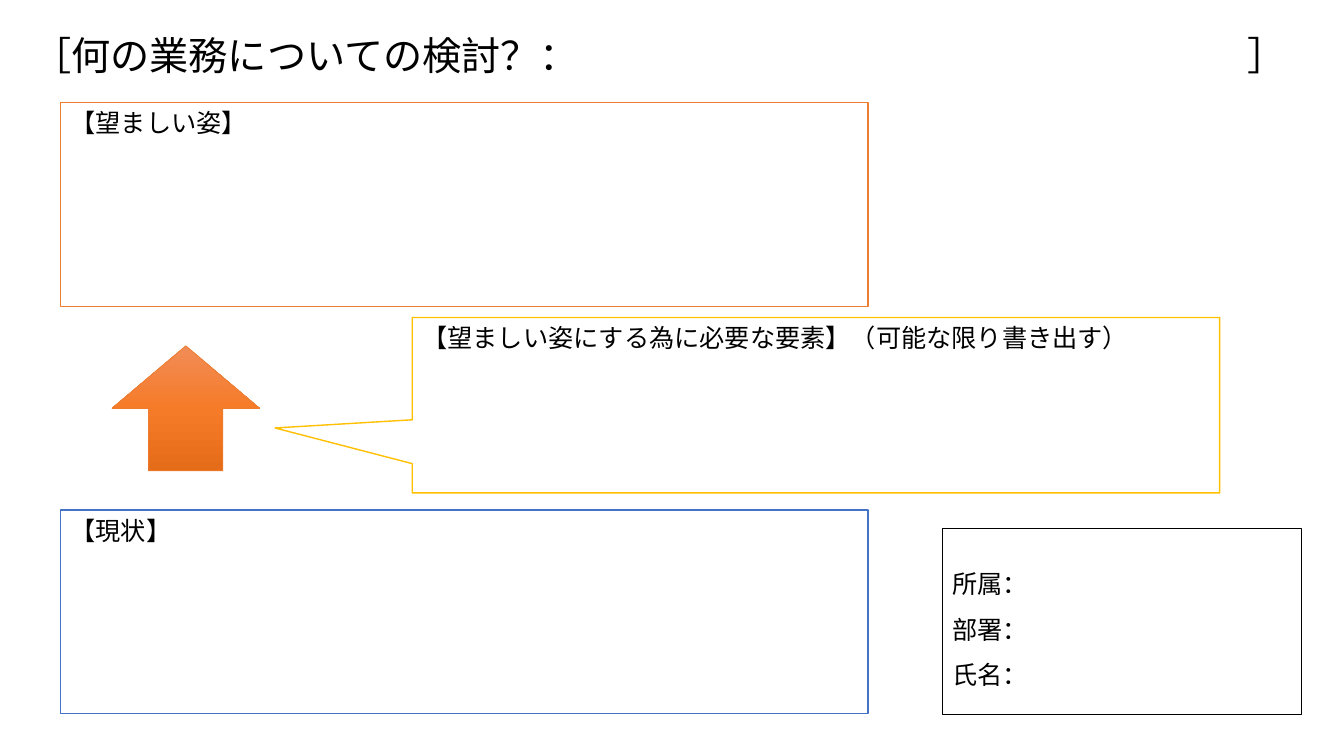
from copy import deepcopy

from pptx import Presentation
from pptx.dml.color import RGBColor
from pptx.enum.shapes import MSO_SHAPE as SHAPE
from pptx.enum.text import MSO_ANCHOR as ANCHOR, PP_ALIGN as ALIGN
from pptx.oxml.ns import qn
from pptx.util import Pt
from lxml.etree import SubElement

FONT = "Noto Sans CJK JP"


def rgb(value):
    """Turn a hex string into a colour."""
    return RGBColor.from_string(value)


def write(tf, text, size=18, color="000000", anchor=ANCHOR.TOP, spacing=1.0):
    """Write one left-aligned paragraph per line of text."""
    tf.word_wrap = True
    tf.vertical_anchor = anchor
    for i, line in enumerate(text.split("\n")):
        p = tf.add_paragraph() if i else tf.paragraphs[0]
        p.alignment = ALIGN.LEFT
        p.line_spacing = spacing
        r = p.add_run()
        r.text = line
        r.font.size = Pt(size)
        r.font.name = FONT
        r.font.color.rgb = rgb(color)
        SubElement(r.font._element, qn("a:ea")).set("typeface", FONT)


def add_title(s, box, label, closing, tab):
    """Place the title, with its closing bracket at a tab stop."""
    title = s.shapes.title
    title.left, title.top, title.width, title.height = map(Pt, box)
    tf = title.text_frame
    write(tf, f"{label}\t{closing}", size=28)
    tabs = SubElement(tf.paragraphs[0]._p.get_or_add_pPr(), qn("a:tabLst"))
    SubElement(tabs, qn("a:tab"), pos=str(Pt(tab)), algn="l")


def add_panel(s, box, line, text="", kind=SHAPE.RECTANGLE, weight=1, **fmt):
    """Place a white outlined shape with its text."""
    sp = s.shapes.add_shape(kind, *map(Pt, box))
    sp.shadow.inherit = False
    sp.fill.solid()
    sp.fill.fore_color.rgb = rgb("FFFFFF")
    sp.line.color.rgb = rgb(line)
    sp.line.width = Pt(weight)
    if text:
        write(sp.text_frame, text, **fmt)
    return sp


def add_callout(s, box, line, text, tip):
    """Place a panel whose pointer ends at the given tip."""
    sp = add_panel(s, box, line, text, SHAPE.RECTANGULAR_CALLOUT)
    sp.adjustments[0], sp.adjustments[1] = tip


def add_arrow(s, box, line, colors):
    """Place an up arrow with an even vertical gradient."""
    sp = add_panel(s, box, line, kind=SHAPE.UP_ARROW, weight=0.5)
    sp.fill.gradient()
    sp.fill.gradient_angle = 270
    stops = sp._element.spPr.find(qn("a:gradFill")).find(qn("a:gsLst"))
    for _ in colors[2:]:
        stops.append(deepcopy(stops[0]))
    for i, (stop, color) in enumerate(zip(sp.fill.gradient_stops, colors)):
        stop.position = i / (len(colors) - 1)
        stop.color.rgb = rgb(color)


def build_slide(prs):
    """Build the worksheet from the current state to the desired one."""
    s = prs.slides.add_slide(prs.slide_layouts[5])
    left, width, height = 43.2, 576.7, 145.4
    add_panel(s, (left, 364.3, width, height), "4472C4", "【現状】")
    add_panel(s, (left, 73.4, width, height), "ED7D31", "【望ましい姿】")
    add_arrow(s, (80, 247, 105.5, 89.3), "ED7D31", ["F18C57", "F67B28", "E56C19"])
    add_callout(s, (294.5, 226.8, width, 125.3), "FFC000",
                "【望ましい姿にする為に必要な要素】（可能な限り書き出す）", (-0.67, 0.13))
    add_panel(s, (673.2, 377.3, 256.3, 133.2), "000000", "所属：\n部署：\n氏名：",
              anchor=ANCHOR.MIDDLE, spacing=1.5)
    add_title(s, (15.8, 18.7, 944, 41), "［何の業務についての検討？：", "］", 868)


def main():
    """Create and save the presentation."""
    prs = Presentation()
    prs.slide_width, prs.slide_height = Pt(960), Pt(540)
    build_slide(prs)
    prs.save("out.pptx")


if __name__ == "__main__":
    main()
